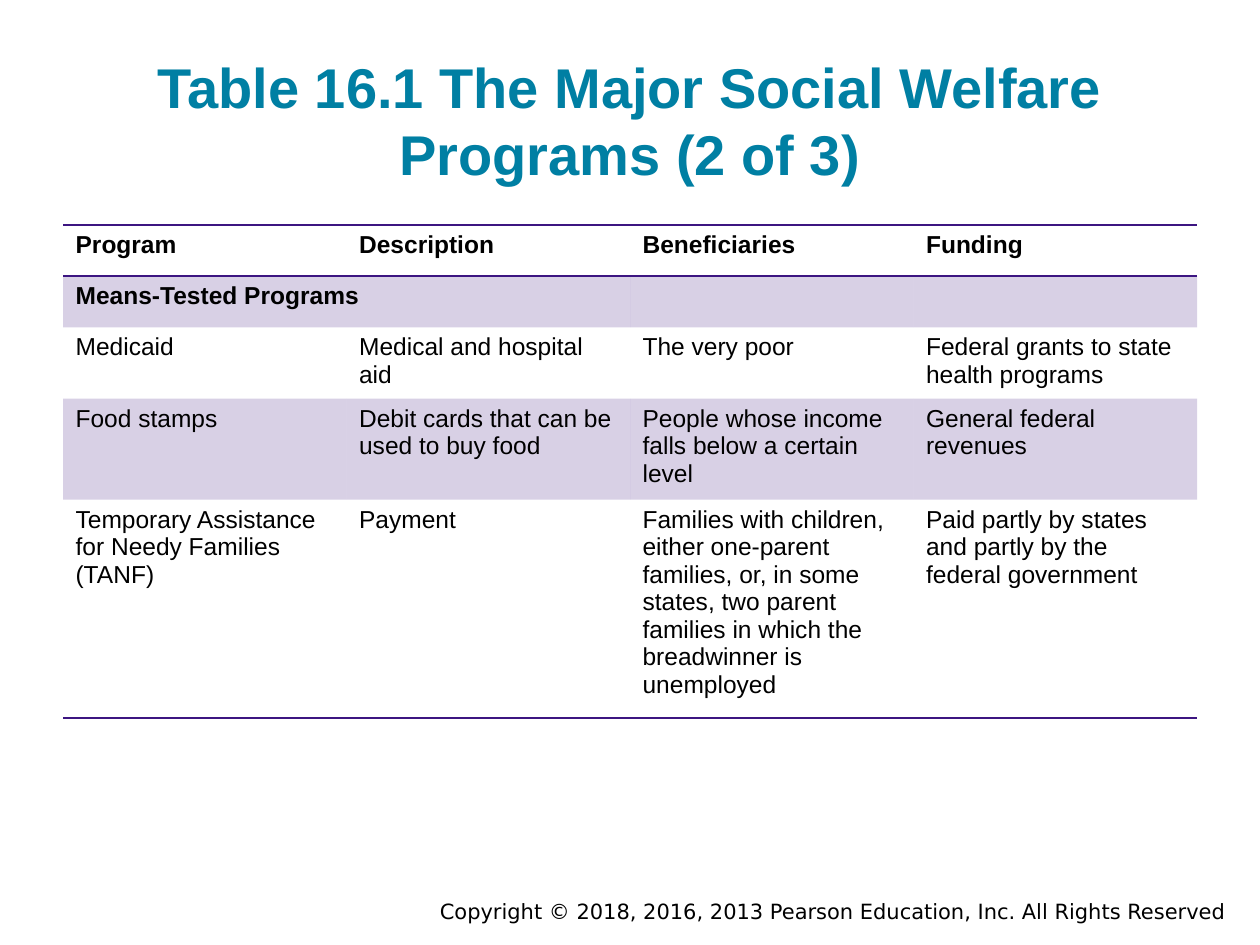
import pptx
import pptx.dml.color
import pptx.enum.text
import pptx.oxml
import pptx.oxml.ns
import pptx.util
from pptx.util import Pt

TEAL = pptx.dml.color.RGBColor(0x00, 0x7F, 0xA3)
PURPLE = pptx.dml.color.RGBColor(0x3C, 0x15, 0x81)
BLACK = pptx.dml.color.RGBColor(0x00, 0x00, 0x00)
NO_GRID_STYLE = "{2D5ABB26-0587-4C30-8999-92F81FD0307C}"
ROWS = [
    ["Program", "Description", "Beneficiaries", "Funding"],
    ["Means-Tested Programs", "", "", ""],
    ["Medicaid", "Medical and hospital aid", "The very poor",
     "Federal grants to state health programs"],
    ["Food stamps", "Debit cards that can be used to buy food",
     "People whose income falls below a certain level",
     "General federal revenues"],
    ["Temporary Assistance for Needy Families (TANF)", "Payment",
     "Families with children, either one-parent families, or, in some states, "
     "two parent families in which the breadwinner is unemployed",
     "Paid partly by states and partly by the federal government"],
]
BORDERS = {0: ["lnT", "lnB"], 4: ["lnB"]}
BOLD_ROWS = SHADED_START = (0, 1)
SHADED_ROWS = (1, 3)

prs = pptx.Presentation()
prs.slide_width, prs.slide_height = Pt(720), Pt(540)
s = prs.slides.add_slide(prs.slide_layouts[6])


def add_text(text, box, font, size, color, align):
    tb = s.shapes.add_textbox(*[Pt(v) for v in box])
    tf = tb.text_frame
    tf.word_wrap = True
    tf.text = text
    p = tf.paragraphs[0]
    p.alignment = align
    f = p.runs[0].font
    f.name, f.size, f.color.rgb = font, Pt(size), color
    return tf


add_text("Copyright © 2018, 2016, 2013 Pearson Education, Inc. All Rights Reserved",
         (144, 509.8, 563.8, 21.6), "DejaVu Sans", 12, BLACK,
         pptx.enum.text.PP_ALIGN.RIGHT)

tf = add_text("Table 16.1 The Major Social Welfare Programs (2 of 3)",
              (36, 24.5, 648, 89.3), "Arial", 32, TEAL,
              pptx.enum.text.PP_ALIGN.CENTER)
tf.vertical_anchor = pptx.enum.text.MSO_ANCHOR.BOTTOM
tf.margin_top = tf.margin_bottom = Pt(7.2)
tf.paragraphs[0].runs[0].font.bold = True

frame = s.shapes.add_table(len(ROWS), 4, Pt(36), Pt(128.6), Pt(648), Pt(146))
table = frame.table
table.horz_banding = False
style = table._tbl.tblPr.find(pptx.oxml.ns.qn("a:tableStyleId"))
style.text = NO_GRID_STYLE
table.cell(1, 0).merge(table.cell(1, 1))

for i, row in enumerate(ROWS):
    for j, text in enumerate(row):
        cell = table.cell(i, j)
        tcPr = cell._tc.get_or_add_tcPr()
        if i in SHADED_ROWS:
            cell.fill.solid()
            cell.fill.fore_color.rgb = PURPLE
            color = tcPr.find(".//" + pptx.oxml.ns.qn("a:srgbClr"))
            color.append(pptx.oxml.parse_xml(
                f'<a:alpha {pptx.oxml.ns.nsdecls("a")} val="20000"/>'))
        else:
            cell.fill.background()
        for k, side in enumerate(BORDERS.get(i, [])):
            tcPr.insert(k, pptx.oxml.parse_xml(
                f'<a:{side} {pptx.oxml.ns.nsdecls("a")} w="12700"><a:solidFill>'
                f'<a:srgbClr val="{PURPLE}"/></a:solidFill></a:{side}>'))
        if text:
            cell.text = text
            f = cell.text_frame.paragraphs[0].runs[0].font
            f.name, f.size, f.color.rgb = "Arial", Pt(14), BLACK
            f.bold = i in BOLD_ROWS

prs.save("out.pptx")
